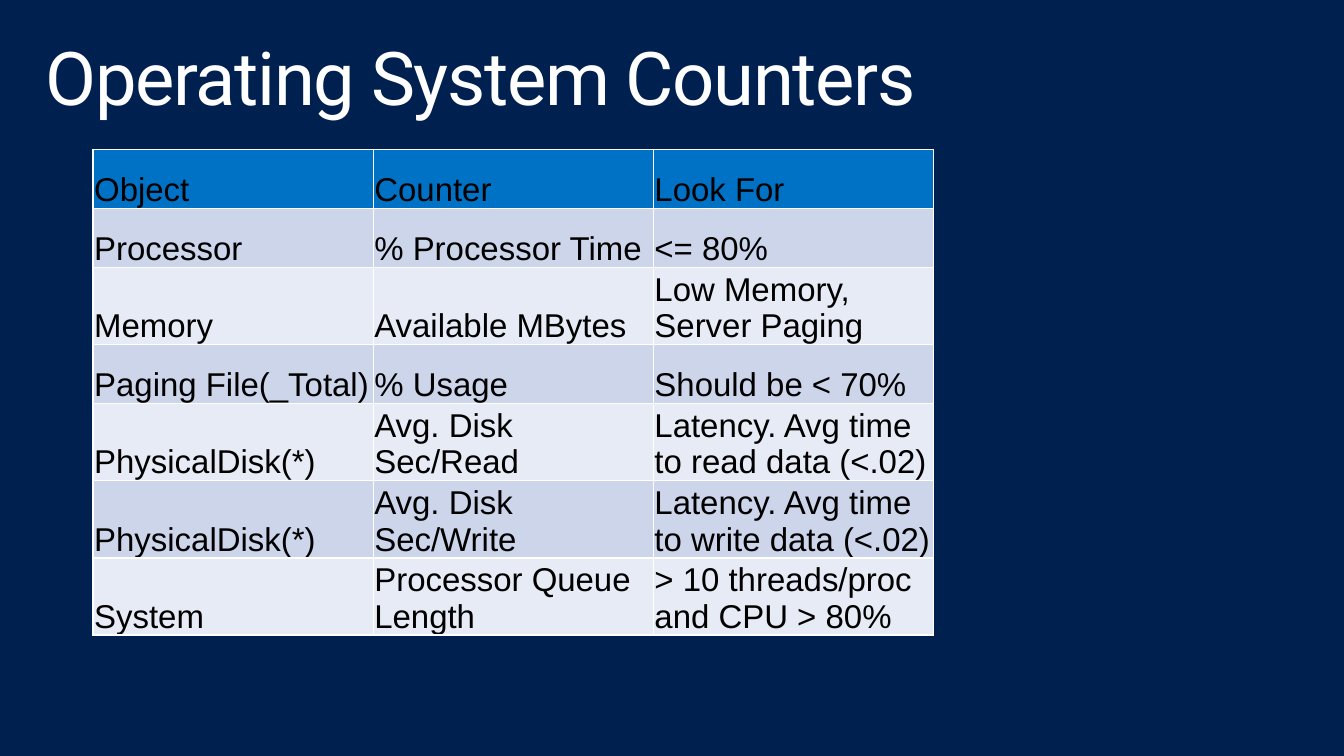
from pptx import Presentation
from pptx.dml.color import RGBColor
from pptx.enum.text import MSO_ANCHOR, MSO_AUTO_SIZE, PP_ALIGN
from pptx.oxml import parse_xml
from pptx.oxml.ns import nsdecls
from pptx.util import Cm, Pt

TOP = MSO_ANCHOR.TOP
BOTTOM = MSO_ANCHOR.BOTTOM
FIXED = MSO_AUTO_SIZE.NONE
LEFT = PP_ALIGN.LEFT

HEAD = "0072C6"
BANDS = ["E7EBF5", "CCD5EA"]
ROWS = [
    ("Object", "Counter", "Look For"),
    ("Processor", "% Processor Time", "<= 80%"),
    ("Memory", "Available MBytes", "Low Memory, Server Paging"),
    ("Paging File(_Total)", "% Usage", "Should be < 70%"),
    ("PhysicalDisk(*)", "Avg. Disk Sec/Read", "Latency. Avg time to read data (<.02)"),
    ("PhysicalDisk(*)", "Avg. Disk Sec/Write", "Latency. Avg time to write data (<.02)"),
    ("System", "Processor Queue Length", "> 10 threads/proc and CPU > 80%"),
]
LOW, TALL = 1.52, 1.98
HEIGHTS = [LOW, LOW, TALL, LOW, TALL, TALL, TALL]
WIDTH = 7.2


def paint(fill, color):
    fill.solid()
    fill.fore_color.rgb = RGBColor.from_string(color)


def style(part, face, size, color):
    part.alignment = LEFT
    font = part.runs[0].font
    font.name = face
    font.size = Pt(size)
    font.bold = False
    paint(font.fill, color)


deck = Presentation()
deck.slide_width = Cm(34.54)
deck.slide_height = Cm(19.43)
slide = deck.slides.add_slide(deck.slide_layouts[5])
paint(slide.background.fill, "002050")

title = slide.shapes.title
title.left, title.top = Cm(0.76), Cm(0.81)
title.width, title.height = Cm(33.02), Cm(2.54)
frame = title.text_frame
frame.text = "Operating System Counters"
frame.word_wrap = True
frame.auto_size = FIXED
frame.vertical_anchor = TOP
frame.margin_left = frame.margin_right = Cm(0.41)
frame.margin_top = frame.margin_bottom = Cm(0.25)
line = frame.paragraphs[0]
line.line_spacing = 0.9
style(line, "Roboto", 54, "FFFFFF")
line.runs[0].font._element.set("spc", "-100")

table = slide.shapes.add_table(
    len(ROWS), 3, Cm(2.39), Cm(3.84), Cm(3 * WIDTH), Cm(sum(HEIGHTS))
).table
for column in table.columns:
    column.width = Cm(WIDTH)

for r, (words, height) in enumerate(zip(ROWS, HEIGHTS)):
    table.rows[r].height = Cm(height)
    for c, word in enumerate(words):
        cell = table.cell(r, c)
        cell.text_frame.text = word
        cell.vertical_anchor = BOTTOM
        cell.margin_left = cell.margin_right = cell.margin_top = Cm(0.03)
        cell.margin_bottom = 0
        style(cell.text_frame.paragraphs[0], "Arial", 24, "000000")
        for side in "LRTB":
            cell._tc.tcPr.append(parse_xml(
                f'<a:ln{side} {nsdecls("a")} w="12700"><a:solidFill>'
                f'<a:srgbClr val="FFFFFF"/></a:solidFill></a:ln{side}>'
            ))
        paint(cell.fill, BANDS[r % 2] if r else HEAD)

deck.save("out.pptx")
